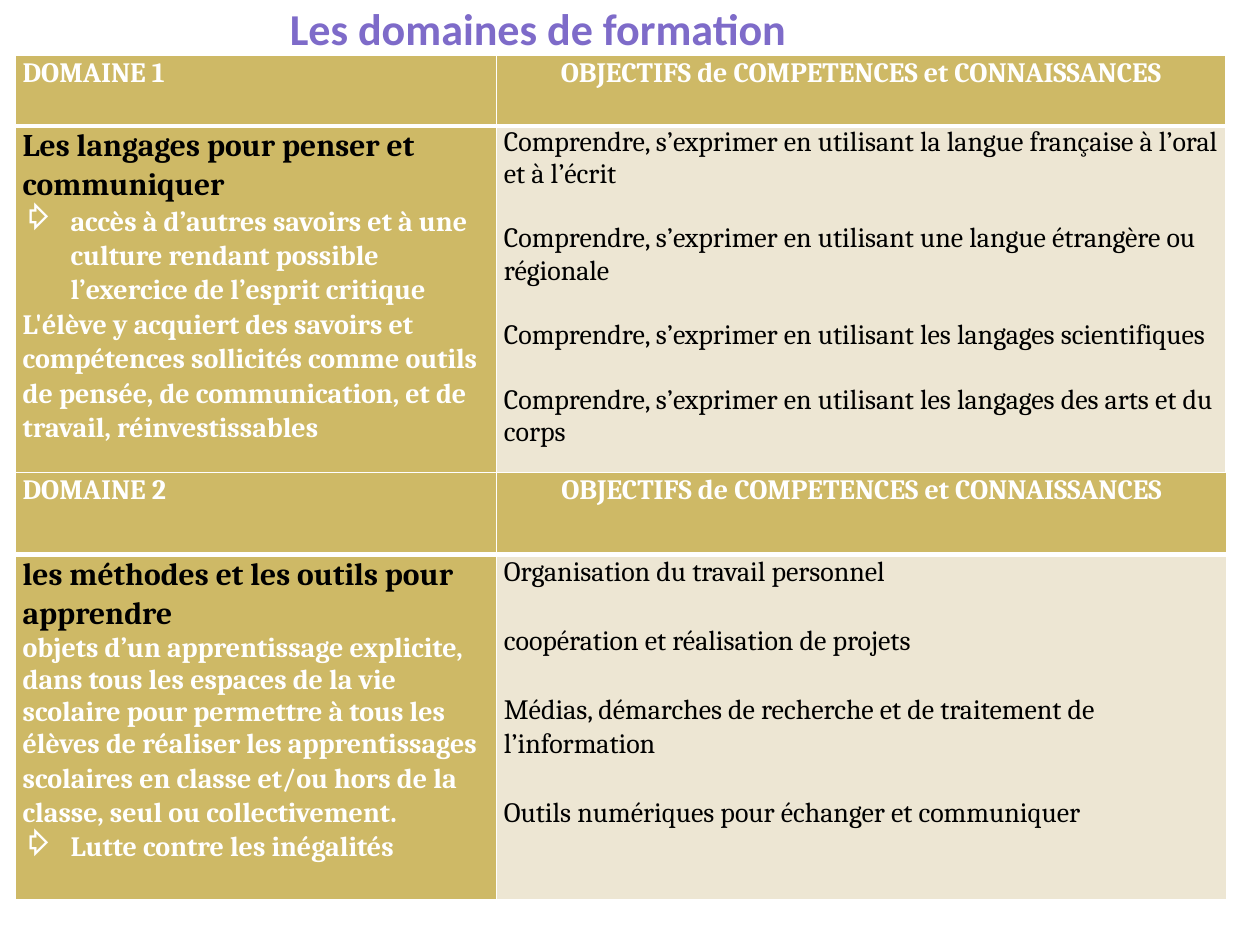
from lxml.etree import SubElement
from pptx import Presentation
from pptx.dml.color import RGBColor
from pptx.enum.text import MSO_ANCHOR, PP_ALIGN
from pptx.oxml import parse_xml
from pptx.oxml.ns import nsdecls, qn
from pptx.util import Inches, Pt

GOLD = RGBColor(0xCE, 0xB9, 0x66)
CREAM = RGBColor(0xED, 0xE6, 0xD3)
PURPLE = RGBColor(0x7E, 0x6B, 0xC9)
WHITE = RGBColor(0xFF, 0xFF, 0xFF)
BLACK = RGBColor(0x00, 0x00, 0x00)

HEAD = dict(name="Cambria", size=Pt(16), bold=True)
NAME = dict(name="Cambria", size=Pt(18), bold=True)
GOAL = dict(name="Cambria", size=Pt(16), bold=False)
LOOSE = 1.07
GOALS_TITLE = "OBJECTIFS de COMPETENCES et CONNAISSANCES"

# Each description paragraph: text, line spacing, bulleted
DOMAINS = [
    dict(
        box=(0.12, 0.44, 3.82, 5.79), heights=(0.56, 2.75),
        head="DOMAINE 1",
        name="Les langages pour penser et communiquer",
        description=[
            ("accès à d’autres savoirs et à une culture rendant possible "
             "l’exercice de l’esprit critique", LOOSE, True),
            ("L'élève y acquiert des savoirs et compétences sollicités comme "
             "outils de pensée, de communication, et de travail, "
             "réinvestissables", LOOSE, False),
        ],
        goals=[
            "Comprendre, s’exprimer en utilisant la langue française à l’oral "
            "et à l’écrit",
            "Comprendre, s’exprimer en utilisant une langue étrangère ou "
            "régionale",
            "Comprendre, s’exprimer en utilisant les langages scientifiques",
            "Comprendre, s’exprimer en utilisant les langages des arts et du "
            "corps",
        ],
        goal_spacing=1.0, goal_gap=Pt(18.5),
    ),
    dict(
        box=(0.12, 3.75, 3.82, 5.8), heights=(0.65, 2.74),
        head="DOMAINE 2",
        name="les méthodes et les outils pour apprendre",
        description=[
            ("objets d’un apprentissage explicite, dans tous les espaces de "
             "la vie scolaire pour permettre à tous les élèves de réaliser "
             "les apprentissages", 1.0, False),
            ("scolaires en classe et/ou hors de la classe, seul ou "
             "collectivement.", LOOSE, False),
            ("Lutte contre les inégalités", LOOSE, True),
        ],
        goals=[
            "Organisation du travail personnel",
            "coopération et réalisation de projets",
            "Médias, démarches de recherche et de traitement de l’information",
            "Outils numériques pour échanger et communiquer",
        ],
        goal_spacing=LOOSE, goal_gap=Pt(19.7),
    ),
]


def add_text(tf, text, font, color, spacing=LOOSE, align=PP_ALIGN.LEFT,
             gap=Pt(0), bullet=False):
    """Fill the first paragraph if it is still empty, else add one."""
    p = tf.paragraphs[0] if not tf.text else tf.add_paragraph()
    p.alignment = align
    p.line_spacing = spacing
    p.space_before = gap
    if bullet:
        pPr = p._p.get_or_add_pPr()
        pPr.set("marL", str(Inches(0.38)))
        pPr.set("indent", str(Inches(-0.38)))
        SubElement(pPr, qn("a:buChar")).set("char", "⇨")
    r = p.add_run()
    r.text = text
    for key, value in font.items():
        setattr(r.font, key, value)
    r.font.color.rgb = color


def style_cell(cell, fill, top, bottom):
    """Set fill, margins and white borders; top and bottom are in points."""
    cell.fill.solid()
    cell.fill.fore_color.rgb = fill
    cell.margin_left = cell.margin_right = Inches(0.06)
    cell.margin_top = cell.margin_bottom = 0
    tcPr = cell._tc.get_or_add_tcPr()
    sides = (("lnL", 1), ("lnR", 1), ("lnT", top), ("lnB", bottom))
    for i, (side, width) in enumerate(sides):
        tcPr.insert(i, parse_xml(
            f'<a:{side} {nsdecls("a")} w="{Pt(width)}"><a:solidFill>'
            f'<a:srgbClr val="{WHITE}"/></a:solidFill></a:{side}>'))


prs = Presentation()
prs.slide_width, prs.slide_height = Inches(10), Inches(7.5)
s = prs.slides.add_slide(prs.slide_layouts[6])

title = s.shapes.add_textbox(0, 0, Inches(8.62), Inches(0.44))
tf = title.text_frame
tf.word_wrap = True
tf.vertical_anchor = MSO_ANCHOR.MIDDLE
add_text(tf, "Les domaines de formation ",
         dict(name="Calibri", size=Pt(25.2), bold=True), PURPLE,
         spacing=1.0, align=PP_ALIGN.CENTER)

for domain in DOMAINS:
    left, top, *widths = domain["box"]
    heights = domain["heights"]
    table = s.shapes.add_table(2, 2, Inches(left), Inches(top),
                               Inches(sum(widths)),
                               Inches(sum(heights))).table
    for column, width in zip(table.columns, widths):
        column.width = Inches(width)
    for row, height in zip(table.rows, heights):
        row.height = Inches(height)
    for c in range(2):
        style_cell(table.cell(0, c), GOLD, 1, 3)
        style_cell(table.cell(1, c), (GOLD, CREAM)[c], 3, 1)

    add_text(table.cell(0, 0).text_frame, domain["head"], HEAD, WHITE)
    add_text(table.cell(0, 1).text_frame, GOALS_TITLE, HEAD, WHITE,
             align=PP_ALIGN.CENTER)

    tf = table.cell(1, 0).text_frame
    add_text(tf, domain["name"], NAME, BLACK)
    for text, spacing, bullet in domain["description"]:
        add_text(tf, text, HEAD, WHITE, spacing, bullet=bullet)

    tf = table.cell(1, 1).text_frame
    for i, goal in enumerate(domain["goals"]):
        add_text(tf, goal, GOAL, BLACK, domain["goal_spacing"],
                 gap=domain["goal_gap"] if i else Pt(0))

prs.save("out.pptx")
